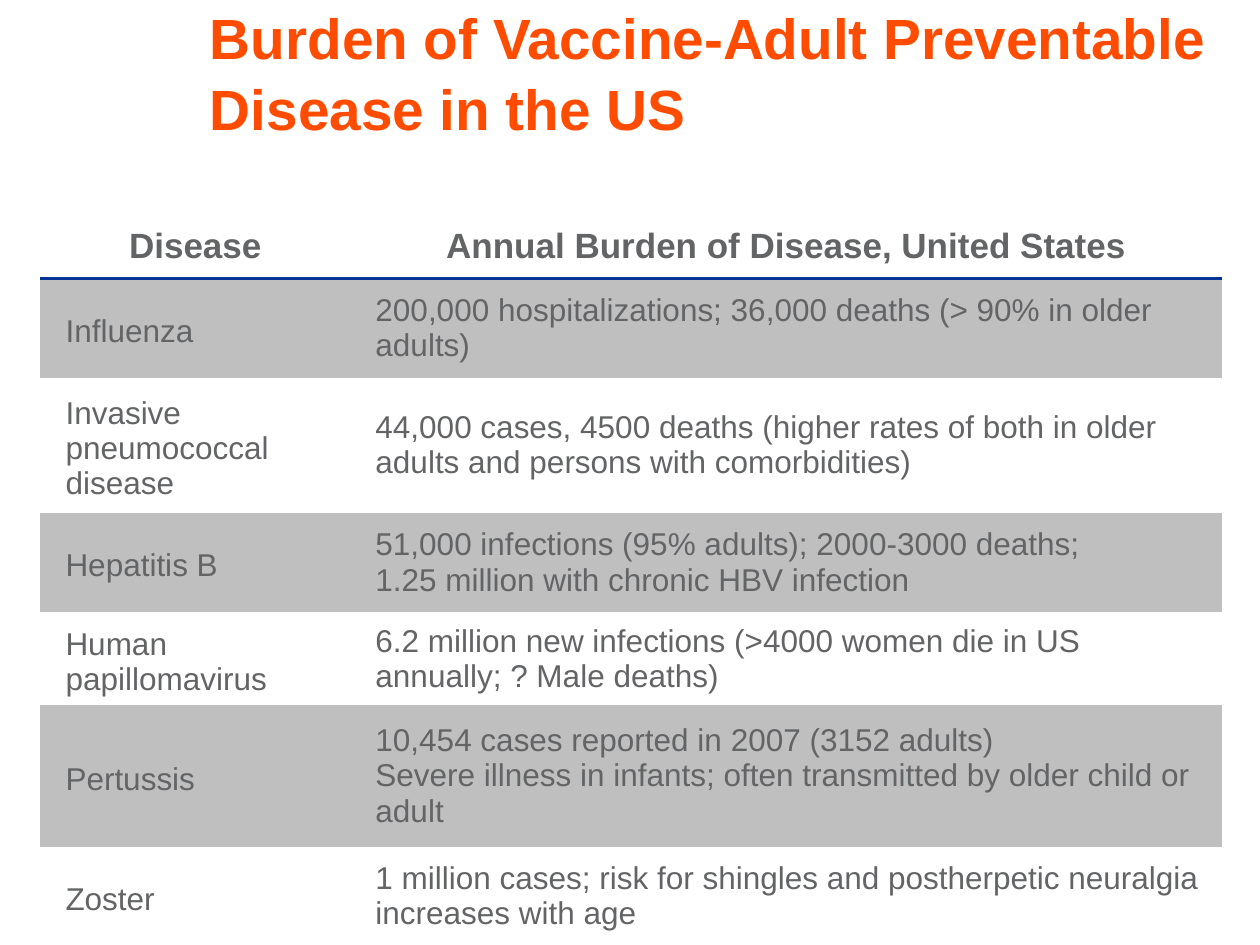
from dataclasses import dataclass
from lxml.etree import SubElement
from pptx import Presentation
from pptx.dml.color import RGBColor
from pptx.enum.text import MSO_ANCHOR, MSO_AUTO_SIZE, PP_ALIGN
from pptx.oxml.ns import qn
from pptx.util import Inches, Pt

WIDE, HIGH = 10, 7.5
HUES = {"title": "FF4C00", "text": "636466", "rule": "003595",
        "band": "BFBFBF", "plain": "FFFFFF"}


@dataclass
class Row:
    name: str
    facts: list[str]
    high: float
    gap: float = 0


HEAD = Row("Disease", ["Annual Burden of Disease, United States"], 0.63)
ROWS = [
    Row("Influenza",
        ["200,000 hospitalizations; 36,000 deaths (> 90% in older adults)"], 0.79),
    Row("Invasive pneumococcal disease",
        ["44,000 cases, 4500 deaths (higher rates of both in older adults "
         "and persons with comorbidities)"], 1.07),
    Row("Hepatitis B",
        ["51,000 infections (95% adults); 2000-3000 deaths;",
         "1.25 million with chronic HBV infection"], 0.79),
    Row("Human papillomavirus",
        ["6.2 million new infections (>4000 women die in US annually; "
         "? Male deaths)"], 0.74, 3.6),
    Row("Pertussis",
        ["10,454 cases reported in 2007 (3152 adults)",
         "Severe illness in infants; often transmitted by older child or adult"], 1.12),
    Row("Zoster",
        ["1 million cases; risk for shingles and postherpetic neuralgia "
         "increases with age"], 0.79),
]
COLS = [2.56, 6.82]


def write(frame, lines: list[str], size: float = 18, hue: str = "text",
          bold: bool = False, align=PP_ALIGN.LEFT, gap: float = 0,
          pitch: float = 1.0) -> None:
    frame.word_wrap = True
    for i, line in enumerate(lines):
        para = frame.paragraphs[0] if i == 0 else frame.add_paragraph()
        para.text = line
        para.alignment = align
        para.space_before = Pt(gap)
        para.line_spacing = pitch
        for run in para.runs:
            run.font.name = "Arial"
            run.font.size = Pt(size)
            run.font.bold = bold
            run.font.color.rgb = RGBColor.from_string(HUES[hue])


def edge(cell, ruled: str) -> None:
    props = cell._tc.get_or_add_tcPr()
    for i, side in enumerate("LRTB"):
        line = SubElement(props, qn(f"a:ln{side}"))
        if side == ruled:
            line.set("w", str(Pt(2.25)))
            fill = SubElement(line, qn("a:solidFill"))
            SubElement(fill, qn("a:srgbClr")).set("val", HUES["rule"])
        else:
            SubElement(line, qn("a:noFill"))
        props.insert(i, line)


def style(cell, hue: str, pads: tuple, anchor, ruled: str = "") -> None:
    cell.fill.solid()
    cell.fill.fore_color.rgb = RGBColor.from_string(HUES[hue])
    (cell.margin_left, cell.margin_top,
     cell.margin_right, cell.margin_bottom) = map(Inches, pads)
    cell.vertical_anchor = anchor
    edge(cell, ruled)


def draw_title(slide) -> None:
    title = slide.shapes.title
    title.left, title.top = Inches(WIDE / 6), 0
    title.width, title.height = Inches(8.17), Inches(HIGH / 5)
    frame = title.text_frame
    frame.margin_left = frame.margin_top = 0
    frame.margin_right = frame.margin_bottom = 0
    frame.vertical_anchor = MSO_ANCHOR.TOP
    frame.auto_size = MSO_AUTO_SIZE.NONE
    write(frame, ["Burden of Vaccine-Adult Preventable \vDisease in the US"],
          size=32.4, hue="title", bold=True, pitch=1.04)


def draw_table(slide) -> None:
    rows = [HEAD, *ROWS]
    grid = slide.shapes.add_table(
        len(rows), len(COLS), Inches(0.32), Inches(1.58),
        Inches(sum(COLS)), Inches(sum(row.high for row in rows))).table
    grid.first_row = grid.horz_banding = False
    for col, wide in zip(grid.columns, COLS):
        col.width = Inches(wide)
    for i, row in enumerate(rows):
        grid.rows[i].height = Inches(row.high)
        name, facts = grid.cell(i, 0), grid.cell(i, 1)
        if i == 0:
            for cell, lines in ((name, [row.name]), (facts, row.facts)):
                style(cell, "plain", (0, 0.05, 0.1, 0.1), MSO_ANCHOR.BOTTOM, "B")
                write(cell.text_frame, lines, size=20, bold=True,
                      align=PP_ALIGN.CENTER, pitch=0.9)
            continue
        hue = "band" if i % 2 else "plain"
        ruled = "T" if i == 1 else ""
        style(name, hue, (0.2, 0.05, 0.1, 0), MSO_ANCHOR.MIDDLE, ruled)
        style(facts, hue, (0.1, 0.05, 0.1, 0.05), MSO_ANCHOR.MIDDLE, ruled)
        write(name.text_frame, [row.name], gap=3.6)
        write(facts.text_frame, row.facts, gap=row.gap)


def main() -> None:
    deck = Presentation()
    deck.slide_width, deck.slide_height = Inches(WIDE), Inches(HIGH)
    slide = deck.slides.add_slide(deck.slide_layouts[5])
    draw_title(slide)
    draw_table(slide)
    deck.save("out.pptx")


if __name__ == "__main__":
    main()
